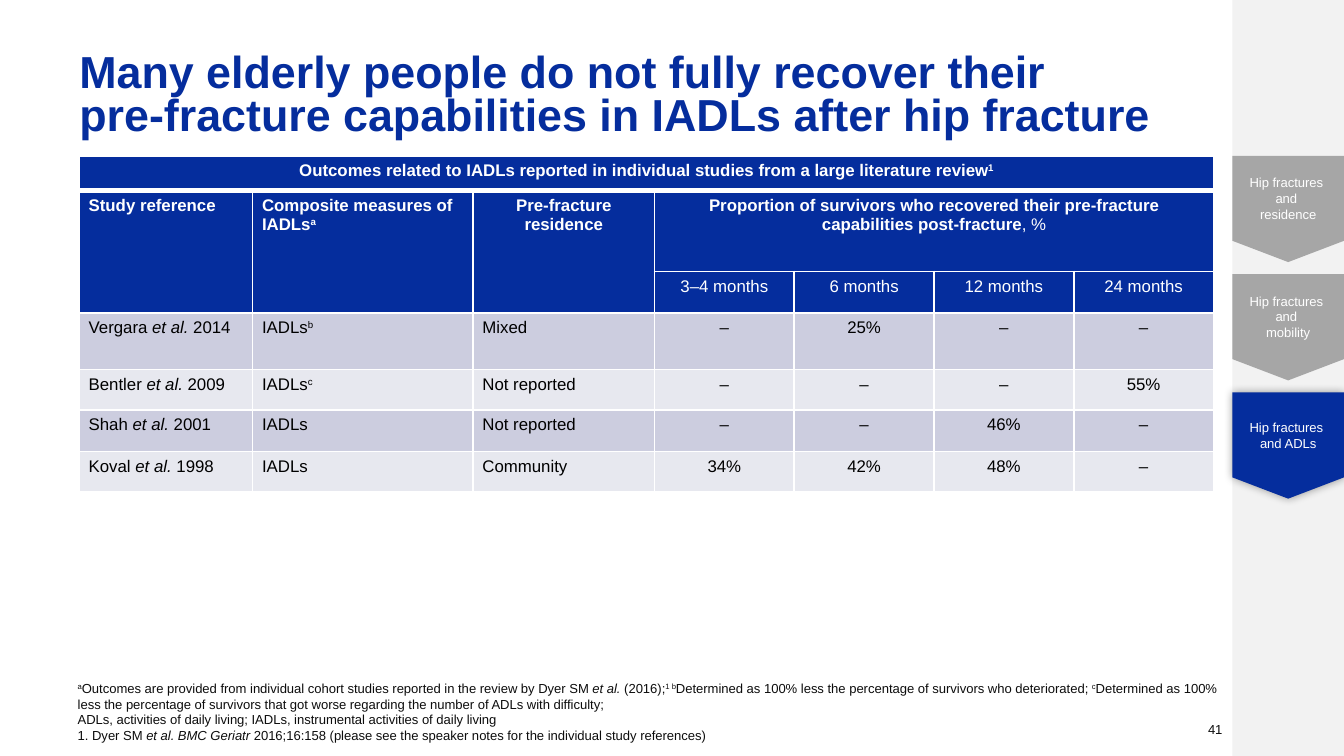
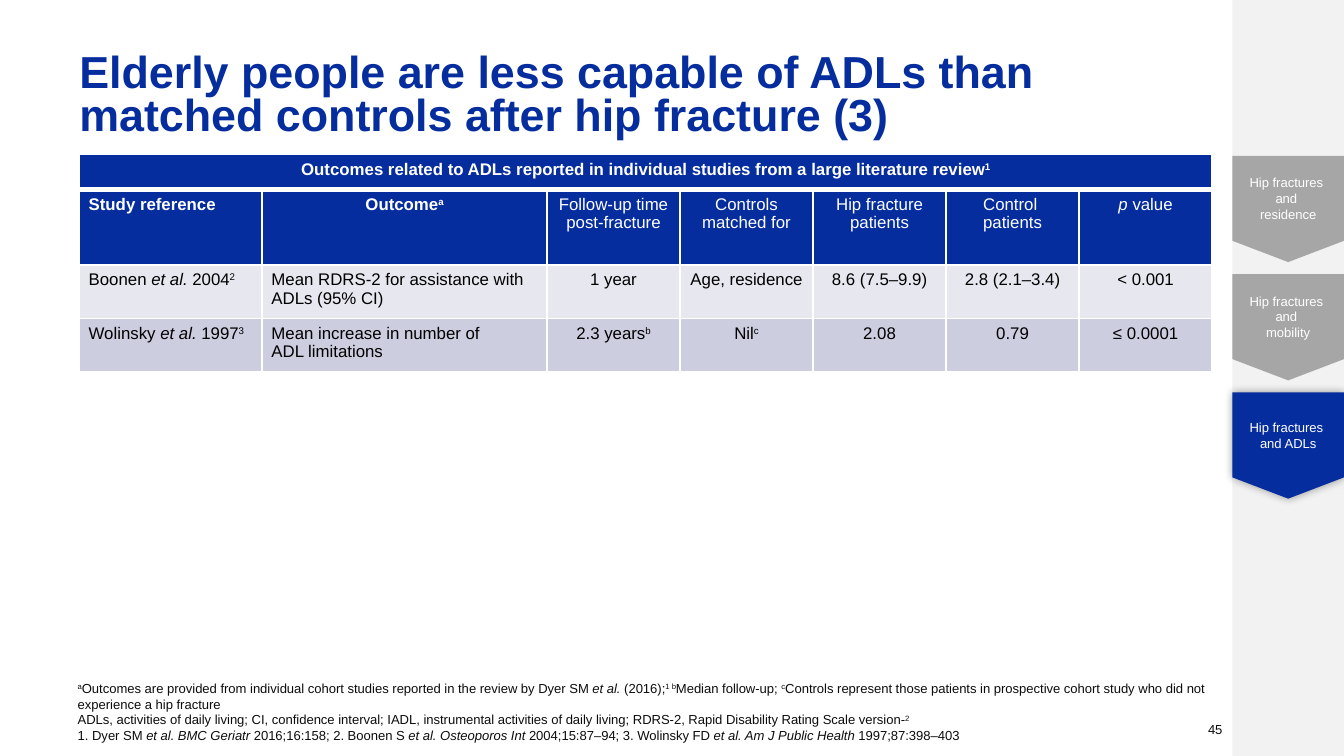
from copy import deepcopy
from dataclasses import dataclass

from lxml.etree import SubElement
from pptx import Presentation
from pptx.dml.color import RGBColor
from pptx.enum.shapes import MSO_SHAPE
from pptx.enum.text import MSO_ANCHOR, MSO_AUTO_SIZE, PP_ALIGN
from pptx.oxml.ns import qn
from pptx.util import Inches, Pt


@dataclass(frozen=True)
class Theme:
    font: str = "Arial"
    blue: str = "052D9D"
    white: str = "FFFFFF"
    black: str = "000000"
    ink: str = "0D0D0D"
    band: str = "F2F2F2"
    tab: str = "A6A6A6"
    dark: str = "CCCDDF"
    light: str = "E7E8EF"
    title: int = 24
    body: int = 9
    small: int = 7


THEME = Theme()
WIDE = 10
HIGH = WIDE * 9 / 16

# Marks in text: #bold#, *italic*, ^superscript^, | line break, \n new paragraph.
TABS = [
    "Hip fractures |and \nresidence",
    "Hip fractures |and \nmobility",
    "Hip fractures |and ADLs",
]
ACTIVE = 2

SLIDES = [
    {
        "title": "Many elderly people do not fully recover their |"
                 "pre-fracture capabilities in IADLs after hip fracture",
        "number": "41",
        "top": 1.16,
        "cols": [1.29, 1.64, 1.35] + [1.04] * 4,
        "heights": [0.26, 0.6, 0.31, 0.42, 0.3, 0.31, 0.3],
        "heads": 3,
        "left": 3,
        "merges": [(0, 0, 0, 6), (1, 0, 2, 0), (1, 1, 2, 1), (1, 2, 2, 2), (1, 3, 1, 6)],
        "rows": [
            ["#Outcomes related to IADLs reported in individual studies "
             "from a large literature review^1^#"],
            ["#Study reference#", "#Composite measures of IADLs^a^#", "#Pre-fracture residence#",
             "#Proportion of survivors who recovered their pre-fracture "
             "capabilities post-fracture#, %"],
            ["", "", "", "3–4 months", "6 months", "12 months", "24 months"],
            ["Vergara *et al.* 2014", "IADLs^b^", "Mixed", "–", "25%", "–", "–"],
            ["Bentler *et al.* 2009", "IADLs^c^", "Not reported", "–", "–", "–", "55%"],
            ["Shah *et al. *2001", "IADLs", "Not reported", "–", "–", "46%", "–"],
            ["Koval *et al. *1998", "IADLs", "Community", "34%", "42%", "48%", "–"],
        ],
        "notes": "^a^Outcomes are provided from individual cohort studies reported in the review "
                 "by Dyer SM *et al. *(2016);^1 b^Determined as 100% less the percentage of "
                 "survivors who deteriorated; ^c^Determined as 100% less the percentage of "
                 "survivors that got worse regarding the number of ADLs with difficulty;\n"
                 "ADLs, activities of daily living; IADLs, instrumental activities of daily living\n"
                 "1. Dyer SM *et al. BMC Geriatr *2016;16:158 "
                 "(please see the speaker notes for the individual study references)",
    },
    {
        "title": "Elderly people are less capable of ADLs than "
                 "matched controls after hip fracture (3)",
        "number": "45",
        "top": 1.15,
        "cols": [1.36, 2.12] + [0.99] * 5,
        "heights": [0.26, 0.56, 0.4, 0.4],
        "heads": 2,
        "left": 2,
        "merges": [(0, 0, 0, 6)],
        "rows": [
            ["#Outcomes related to ADLs reported in individual studies "
             "from a large literature review^1^#"],
            ["#Study reference#", "#Outcome^a^#", "Follow-up time post-fracture",
             "Controls matched for", "Hip fracture patients", "Control \npatients", "*p* value"],
            ["Boonen *et al.* 2004^2^", "Mean RDRS-2 for assistance with ADLs (95% CI)",
             "1 year", "Age, residence", "8.6 (7.5–9.9)", "2.8 (2.1–3.4)", "< 0.001"],
            ["Wolinsky *et al. *1997^3^", "Mean increase in number of\nADL limitations",
             "2.3 years^b^", "Nil^c^", "2.08", "0.79", "≤ 0.0001"],
        ],
        "notes": "^a^Outcomes are provided from individual cohort studies reported in the review "
                 "by Dyer SM *et al. *(2016);^1 b^Median follow-up; ^c^Controls represent those "
                 "patients in prospective cohort study who did not experience a hip fracture\n"
                 "ADLs, activities of daily living; CI, confidence interval; IADL, instrumental "
                 "activities of daily living; RDRS-2, Rapid Disability Rating Scale version-^2^\n"
                 "1. Dyer SM *et al. BMC Geriatr *2016;16:158; 2. Boonen S *et al. Osteoporos Int* "
                 "2004;15:87–94; 3. Wolinsky FD *et al. Am J Public Health *1997;87:398–403",
    },
]


def color(code):
    return RGBColor.from_string(code)


def split(text):
    """Yield (piece, marks in force); a line break comes as the piece "|"."""
    piece, marks = "", set()
    for char in text:
        if char not in "#*^|":
            piece += char
            continue
        if piece:
            yield piece, set(marks)
        piece = ""
        if char == "|":
            yield char, set(marks)
        else:
            marks ^= {char}
    if piece:
        yield piece, marks


def write(frame, text, size, code, align=PP_ALIGN.LEFT, bold=False, space=None):
    for i, line in enumerate(text.split("\n")):
        para = frame.add_paragraph() if i else frame.paragraphs[0]
        para.alignment = align
        para.line_spacing = space
        for piece, marks in split(line):
            if piece == "|":
                para.add_line_break()
                para._p[-1].append(deepcopy(run._r.rPr))
                continue
            run = para.add_run()
            run.text = piece
            font = run.font
            font.name, font.size = THEME.font, Pt(size)
            font.color.rgb = color(code)
            font.bold = bold or "#" in marks
            font.italic = "*" in marks
            if "^" in marks:
                run._r.get_or_add_rPr().set("baseline", "30000")


def block(slide, kind, box, code):
    shape = slide.shapes.add_shape(kind, *map(Inches, box))
    shape.fill.solid()
    shape.fill.fore_color.rgb = color(code)
    shape.line.fill.background()
    shape.shadow.inherit = False
    return shape


def glow(shape):
    """Give the shape a soft, centred shadow."""
    effects = shape._element.spPr.find(qn("a:effectLst"))
    shade = SubElement(effects, qn("a:outerShdw"), blurRad=str(Pt(5)), dist="0",
                       algn="ctr", rotWithShape="0")
    tint = SubElement(shade, qn("a:srgbClr"), val=THEME.black)
    SubElement(tint, qn("a:alpha"), val="40000")


def sidebar(slide):
    left, top, wide, high, step = 9.17, 1.16, 0.83, 0.79, 0.88
    block(slide, MSO_SHAPE.RECTANGLE, (left, 0, wide, HIGH), THEME.band)
    for i, label in enumerate(TABS):
        on = i == ACTIVE
        tab = block(slide, MSO_SHAPE.FLOWCHART_OFFPAGE_CONNECTOR,
                    (left, top + i * step, wide, high), THEME.blue if on else THEME.tab)
        if on:
            glow(tab)
        frame = tab.text_frame
        frame.word_wrap = True
        frame.vertical_anchor = MSO_ANCHOR.MIDDLE
        frame.margin_left = frame.margin_right = Inches(0.08)
        write(frame, label, THEME.small, THEME.white, PP_ALIGN.CENTER)


def heading(slide, text):
    title = slide.shapes.title
    title.left, title.top, title.width, title.height = map(Inches, (0.49, 0.25, 8.52, 0.95))
    frame = title.text_frame
    frame.word_wrap = True
    frame.auto_size = MSO_AUTO_SIZE.NONE
    frame.vertical_anchor = MSO_ANCHOR.MIDDLE
    write(frame, text, THEME.title, THEME.blue, bold=True, space=0.8)


def label(slide, box, text, anchor):
    frame = slide.shapes.add_textbox(*map(Inches, box)).text_frame
    frame.word_wrap = True
    frame.vertical_anchor = anchor
    write(frame, text, THEME.small, THEME.ink)


def border(cell, row):
    """Rule the cell in white, thicker between the first two rows."""
    props = cell._tc.get_or_add_tcPr()
    thick = {(0, "B"), (1, "T")}
    for side in "LRTB":
        width = Pt(3 if (row, side) in thick else 1)
        line = SubElement(props, qn(f"a:ln{side}"), w=str(width))
        fill = SubElement(line, qn("a:solidFill"))
        SubElement(fill, qn("a:srgbClr"), val=THEME.white)


def grid(slide, data):
    cols, heights = data["cols"], data["heights"]
    box = (0.59, data["top"], sum(cols), sum(heights))
    table = slide.shapes.add_table(len(heights), len(cols), *map(Inches, box)).table
    table.first_row = table.horz_banding = False
    for col, width in zip(table.columns, cols):
        col.width = Inches(width)
    for r, height in enumerate(heights):
        table.rows[r].height = Inches(height)
        head = r < data["heads"]
        # Among the headings, the last left-aligned column is centred.
        left = 0 if r == 0 else data["left"] - head
        shade = THEME.blue if head else THEME.dark if r % 2 else THEME.light
        texts = data["rows"][r]
        for c in range(len(cols)):
            cell = table.cell(r, c)
            border(cell, r)
            cell.fill.solid()
            cell.fill.fore_color.rgb = color(shade)
            cell.margin_left = cell.margin_right = Inches(0.07)
            cell.margin_top = cell.margin_bottom = Inches(0.04)
            if c < len(texts):
                write(cell.text_frame, texts[c], THEME.body,
                      THEME.white if head else THEME.black,
                      PP_ALIGN.LEFT if c < left else PP_ALIGN.CENTER)
    for top, start, low, end in data["merges"]:
        table.cell(top, start).merge(table.cell(low, end))


def main():
    deck = Presentation()
    deck.slide_width, deck.slide_height = Inches(WIDE), Inches(HIGH)
    for data in SLIDES:
        slide = deck.slides.add_slide(deck.slide_layouts[5])
        sidebar(slide)
        heading(slide, data["title"])
        grid(slide, data)
        label(slide, (0.48, 5.35, 8.7, 0.23), data["notes"], MSO_ANCHOR.BOTTOM)
        label(slide, (8.89, 5.31, 0.8, 0.23), data["number"], MSO_ANCHOR.MIDDLE)
    deck.save("out.pptx")


if __name__ == "__main__":
    main()
